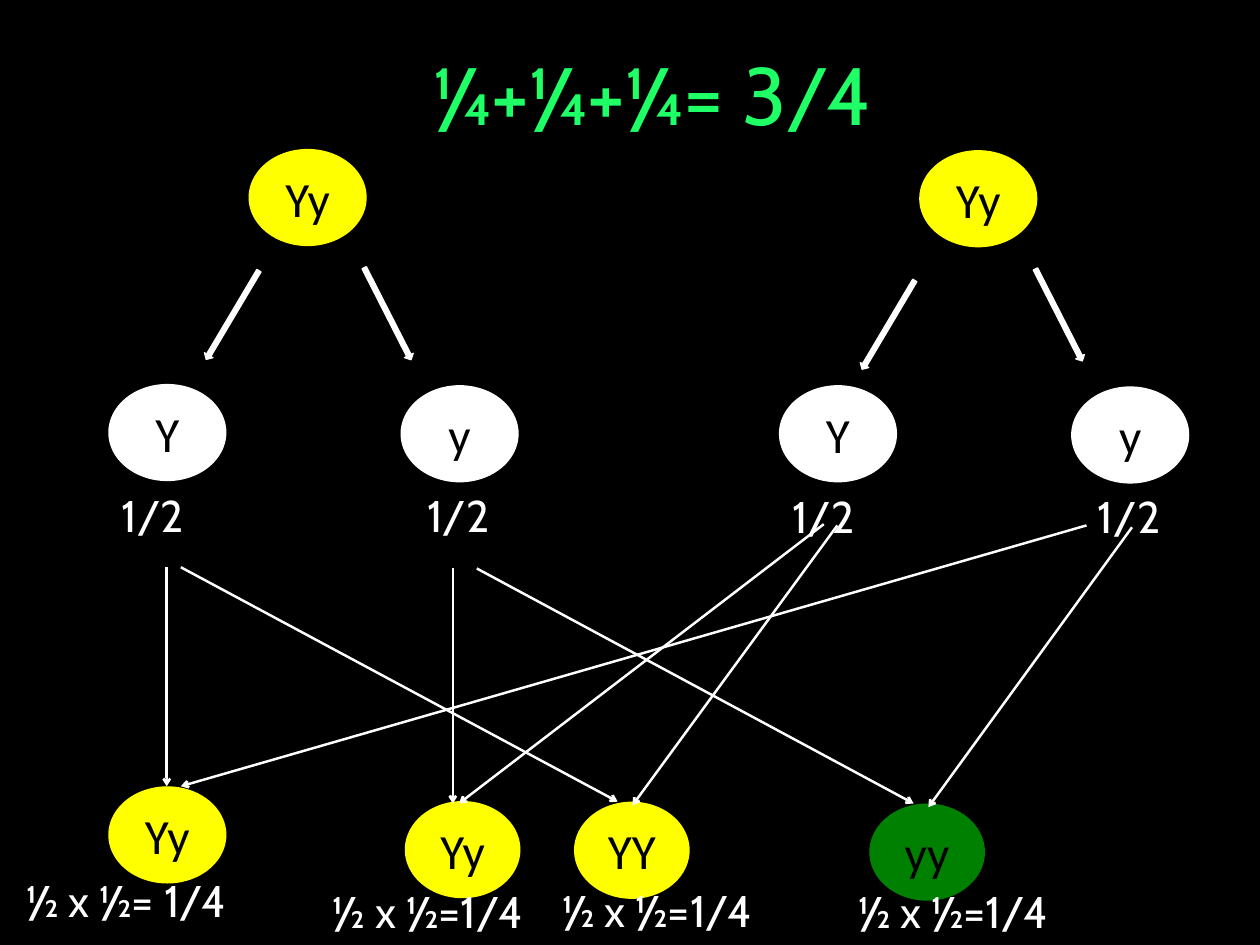
"""Build a slide on the odds of a yellow seed in a Yy by Yy cross."""
from dataclasses import dataclass

from lxml import etree
from pptx import Presentation
from pptx import util as u
from pptx.dml import color as col
from pptx.enum import shapes, text
from pptx.oxml import ns


@dataclass(frozen=True)
class Theme:
    black: str = "000000"
    white: str = "FFFFFF"
    yellow: str = "FFFF00"
    green: str = "008000"
    lime: str = "1FFF66"
    gene: str = "Calibri"
    body: str = "Cabin"
    head: int = 66
    seed: int = 40
    note: int = 36


theme = Theme()
Pt = u.Pt
rgb = col.RGBColor.from_string

deck = Presentation()
deck.slide_width, deck.slide_height = Pt(1024), Pt(768)
slide = deck.slides.add_slide(deck.slide_layouts[5])
slide.background.fill.solid()
slide.background.fill.fore_color.rgb = rgb(theme.black)


def write(shape, words, font, size, ink, align):
    frame = shape.text_frame
    frame.text = words
    frame.word_wrap = True
    frame.auto_size = text.MSO_AUTO_SIZE.NONE
    frame.vertical_anchor = text.MSO_ANCHOR.MIDDLE
    frame.margin_left = frame.margin_right = Pt(4)
    frame.margin_top = frame.margin_bottom = Pt(4)
    line = frame.paragraphs[0]
    line.alignment = align
    face = line.runs[0].font
    face.name, face.size, face.color.rgb = font, Pt(size), rgb(ink)


def solid(kind, left, top, width, height, fill):
    shape = slide.shapes.add_shape(kind, Pt(left), Pt(top), Pt(width), Pt(height))
    shape.shadow.inherit = False
    shape.fill.solid()
    shape.fill.fore_color.rgb = rgb(fill)
    shape.line.fill.background()
    return shape


title = slide.shapes.title
title.left, title.top, title.width, title.height = Pt(292), Pt(32), Pt(421), Pt(88)
write(title, "¼+¼+¼= 3/4", theme.body, theme.head, theme.lime, text.PP_ALIGN.RIGHT)

seeds, notes = [], []
for shift, drop in ((0, 0), (545, 1)):
    seeds += [
        ("Yy", 202 + shift, 121 + drop, 96, theme.yellow),
        ("Y", 88 + shift, 312 + drop, 96, theme.white),
        ("y", 325.5 + shift, 313 + drop, 96, theme.white),
    ]
    notes += [("1/2", right + shift, 392 + drop, 66) for right in (153.5, 402)]

seeds += [
    ("Yy", 88, 639, 96, theme.yellow),
    ("Yy", 329, 651, 94, theme.yellow),
    ("YY", 466.5, 651.5, 94, theme.yellow),
    ("yy", 706.5, 653, 94, theme.green),
]
notes += [
    ("½ x ½= 1/4", 188, 705, 180),
    ("½ x ½=1/4", 429, 714, 180),
    ("½ x ½=1/4", 615.5, 713, 180),
    ("½ x ½=1/4", 856, 714, 180),
]

for word, left, top, width, fill in seeds:
    seed = solid(shapes.MSO_SHAPE.OVAL, left, top, width, 79, fill)
    write(seed, word, theme.gene, theme.seed, theme.black, text.PP_ALIGN.CENTER)

for left, top, turn in (
    (147, 252, 120.7), (273, 251, 63), (680, 260, 120.7), (818.5, 252, 63),
):
    arrow = solid(shapes.MSO_SHAPE.RIGHT_ARROW, left, top, 84, 8, theme.white)
    arrow.rotation = turn
    arrow.line.color.rgb = rgb(theme.white)
    arrow.line.width = Pt(1)

for ends in (
    (135.5, 461, 135.5, 639), (883, 427, 147, 639),
    (368, 462, 368, 653), (669.5, 426, 373, 653),
    (147, 461, 502, 651.5), (680.5, 427, 514, 654.5),
    (387.5, 462, 742.5, 653), (920, 428.5, 754.5, 656),
):
    link = slide.shapes.add_connector(shapes.MSO_CONNECTOR.STRAIGHT, *map(Pt, ends))
    link.line.color.rgb = rgb(theme.white)
    link.line.width = Pt(2)
    etree.SubElement(link.line._get_or_add_ln(), ns.qn("a:tailEnd"), type="arrow")
    etree.SubElement(link._element.spPr, ns.qn("a:effectLst"))

for words, right, top, width in notes:
    note = slide.shapes.add_textbox(Pt(right - width), Pt(top), Pt(width), Pt(52))
    write(note, words, theme.body, theme.note, theme.white, text.PP_ALIGN.RIGHT)

deck.save("out.pptx")
